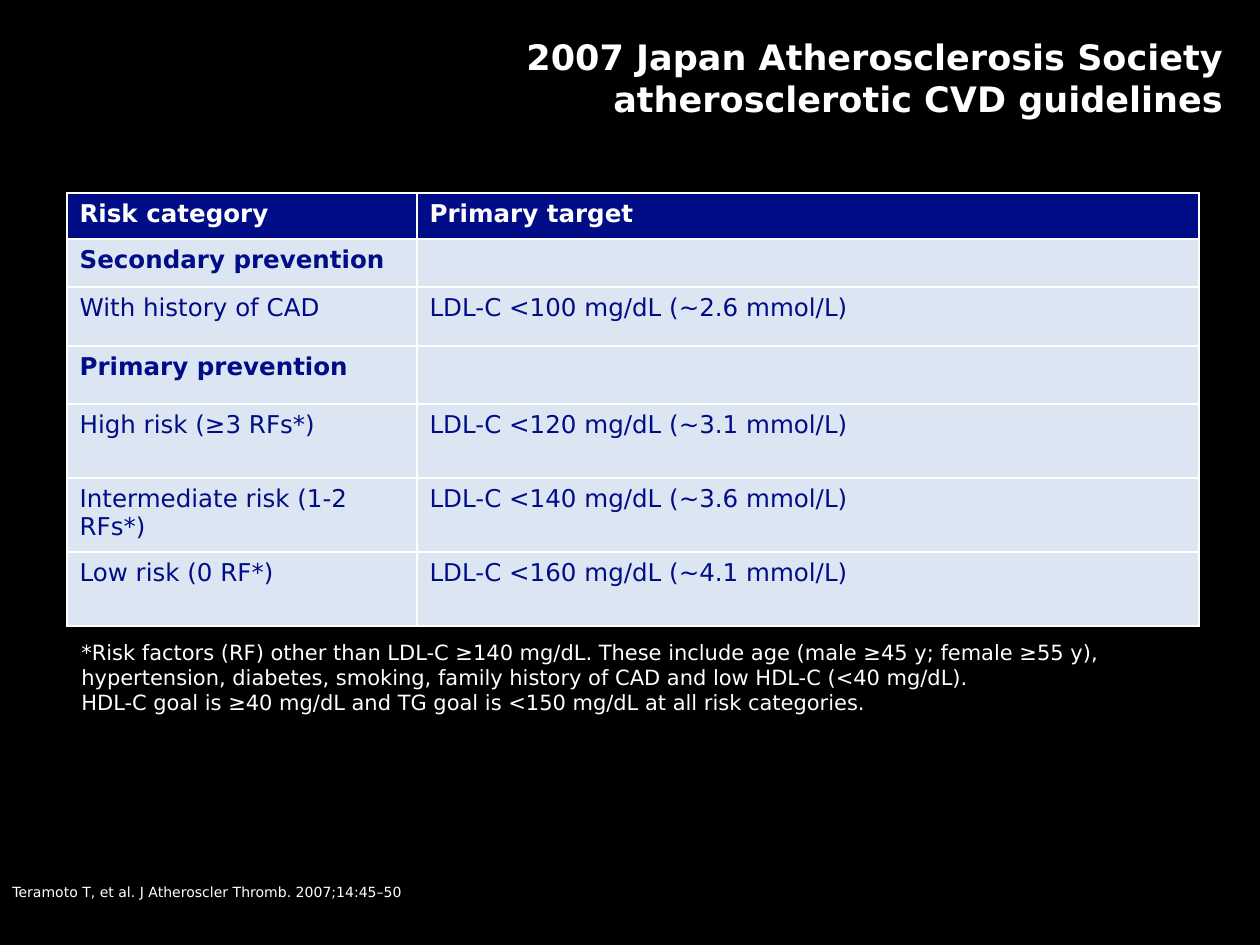
from copy import deepcopy

from lxml import etree
from pptx import Presentation
from pptx import util as u
from pptx.dml.color import RGBColor
from pptx.enum import text
from pptx.oxml.ns import qn

PX = 914400 / 126
FONT = "DejaVu Sans"
COLORS = {"black": "000000", "white": "FFFFFF", "navy": "010D87", "pale": "DCE6F2"}


def px(n):
    return u.Emu(round(n * PX))


def write(tf, content, size=14, color="white", bold=False, align=text.PP_ALIGN.LEFT):
    """Fill a text frame: one paragraph per list item, a newline is a line break."""
    for i, line in enumerate(content):
        p = tf.paragraphs[0] if i == 0 else tf.add_paragraph()
        p.text = line
        p.alignment = align
        for r in p.runs:
            r.font.name = FONT
            r.font.size = u.Pt(size)
            r.font.bold = bold
            r.font.color.rgb = RGBColor.from_string(COLORS[color])
        for br in p._p.findall(qn("a:br")):
            br.append(deepcopy(p.runs[0]._r.rPr))
        if not line:
            etree.SubElement(p._p, qn("a:endParaRPr"), sz=str(size * 100))


prs = Presentation()
prs.slide_width, prs.slide_height = px(1260), px(945)
s = prs.slides.add_slide(prs.slide_layouts[5])
s.background.fill.solid()
s.background.fill.fore_color.rgb = RGBColor.from_string(COLORS["black"])

# Title
title = s.shapes.title
title.left, title.top, title.width, title.height = px(194), px(-1), px(1042), px(157)
title.text_frame.vertical_anchor = text.MSO_ANCHOR.MIDDLE
write(title.text_frame,
      ["2007 Japan Atherosclerosis Society\natherosclerotic CVD guidelines"],
      size=20, bold=True, align=text.PP_ALIGN.RIGHT)

# Risk table
rows = [
    (46, "Risk category", "Primary target"),
    (48, "Secondary prevention", ""),
    (59, "With history of CAD", "LDL-C <100 mg/dL (~2.6 mmol/L)"),
    (58, "Primary prevention", ""),
    (74, "High risk (≥3 RFs*)", "LDL-C <120 mg/dL (~3.1 mmol/L)"),
    (74, "Intermediate risk (1-2 RFs*)", "LDL-C <140 mg/dL (~3.6 mmol/L)"),
    (74, "Low risk (0 RF*)", "LDL-C <160 mg/dL (~4.1 mmol/L)"),
]
widths = [350, 782]
table = s.shapes.add_table(len(rows), len(widths), px(67), px(193),
                           px(sum(widths)), px(sum(row[0] for row in rows))).table
for col, width in zip(table.columns, widths):
    col.width = px(width)
for i, (height, *labels) in enumerate(rows):
    table.rows[i].height = px(height)
    header = i == 0
    heading = header or not labels[1]
    for j, label in enumerate(labels):
        cell = table.cell(i, j)
        write(cell.text_frame, [label], color="white" if header else "navy", bold=heading)
        tcPr = cell._tc.get_or_add_tcPr()
        for side in ("lnL", "lnR", "lnT", "lnB"):
            ln = etree.SubElement(tcPr, qn(f"a:{side}"), w=str(u.Pt(1)))
            fill = etree.SubElement(ln, qn("a:solidFill"))
            etree.SubElement(fill, qn("a:srgbClr"), val=COLORS["white"])
        cell.fill.solid()
        cell.fill.fore_color.rgb = RGBColor.from_string(COLORS["navy" if header else "pale"])

# Footnote and citation
notes = [
    ((69, 633, 1137, 89), 12, [
        "*Risk factors (RF) other than LDL-C ≥140 mg/dL. These include age (male ≥45 y; "
        "female ≥55 y), hypertension, diabetes, smoking, family history of CAD and low "
        "HDL-C (<40 mg/dL).",
        "HDL-C goal is ≥40 mg/dL and TG goal is <150 mg/dL at all risk categories."]),
    ((0, 877, 1147, 30), 8, ["Teramoto T, et al. J Atheroscler Thromb. 2007;14:45–50"]),
]
for box, size, content in notes:
    tf = s.shapes.add_textbox(*map(px, box)).text_frame
    tf.word_wrap = True
    tf.auto_size = text.MSO_AUTO_SIZE.SHAPE_TO_FIT_TEXT
    write(tf, content, size=size)

prs.save("out.pptx")
